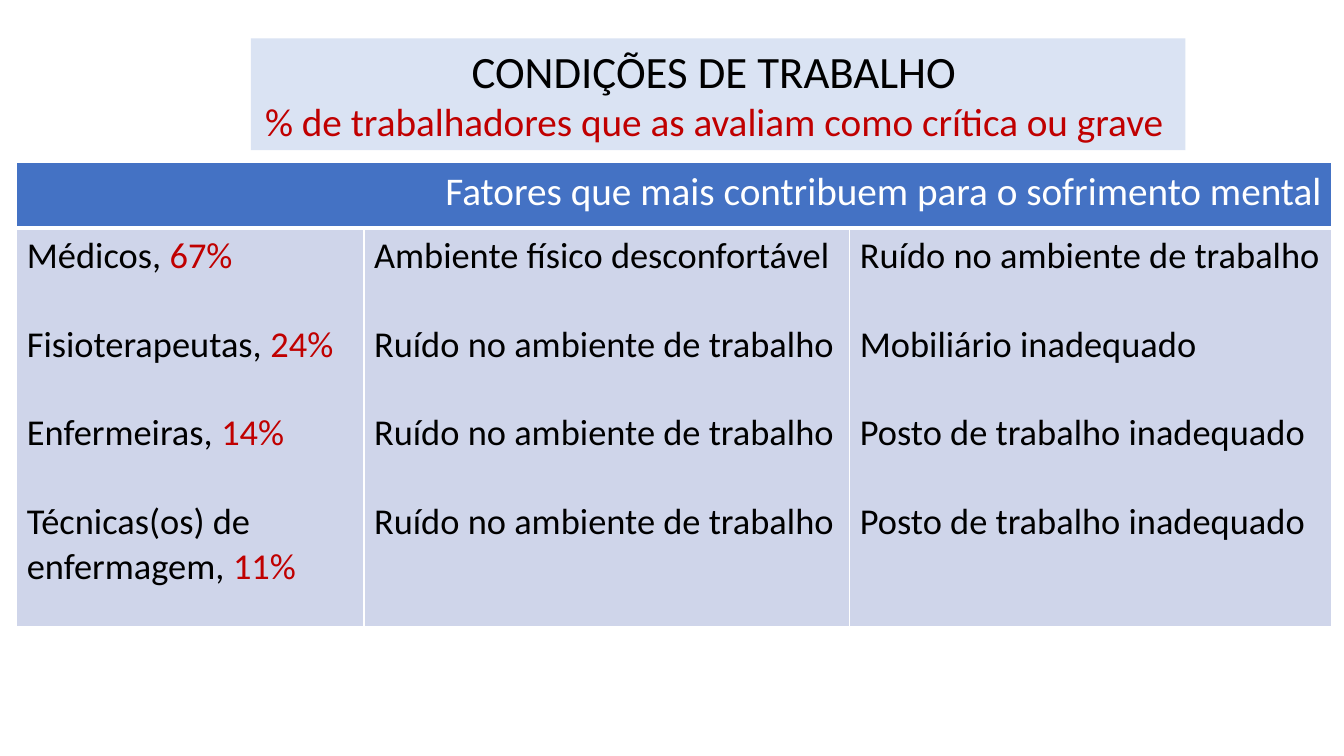
"""Build the slide on working conditions and mental suffering factors."""
from dataclasses import dataclass

from lxml import etree
from pptx import Presentation
from pptx.dml.color import RGBColor
from pptx.enum.shapes import MSO_SHAPE
from pptx.enum.text import MSO_ANCHOR, PP_ALIGN
from pptx.oxml.ns import qn
from pptx.slide import Slide
from pptx.table import _Cell
from pptx.text.text import TextFrame
from pptx.util import Pt

RECTANGLE = MSO_SHAPE.RECTANGLE
MIDDLE = MSO_ANCHOR.MIDDLE
LEFT, CENTER, RIGHT = PP_ALIGN.LEFT, PP_ALIGN.CENTER, PP_ALIGN.RIGHT


@dataclass(frozen=True)
class Theme:
    font: str = "Calibri"
    title_size: float = 32
    heading_size: float = 28
    body_size: float = 26
    entry_gap: float = 31.7
    black: str = "000000"
    white: str = "FFFFFF"
    red: str = "C00000"
    banner: str = "DAE3F3"
    header: str = "4472C4"
    body: str = "CFD5EA"


@dataclass(frozen=True)
class Span:
    text: str
    color: str
    size: float


@dataclass(frozen=True)
class Profession:
    name: str
    share: str
    first_factor: str
    second_factor: str


THEME = Theme()
NOISE = "Ruído no ambiente de trabalho"
WORKSTATION = "Posto de trabalho inadequado"
PROFESSIONS = [
    Profession("Médicos, ", "67%", "Ambiente físico desconfortável", NOISE),
    Profession("Fisioterapeutas, ", "24%", NOISE, "Mobiliário inadequado"),
    Profession("Enfermeiras, ", "14%", NOISE, WORKSTATION),
    Profession("Técnicas(os) de enfermagem, ", "11%", NOISE, WORKSTATION),
]
COLUMN_WIDTHS = [248, 347, 344]
ROW_HEIGHTS = [46.8, 284.4]


def body_span(text: str, color: str = THEME.black) -> Span:
    """Return a span in the table's body size."""
    return Span(text, color, THEME.body_size)


def write(frame: TextFrame, lines: list[list[Span]], alignment: PP_ALIGN, gap: float = 0) -> None:
    """Write one paragraph per line, with a gap between paragraphs."""
    for index, spans in enumerate(lines):
        paragraph = frame.add_paragraph() if index else frame.paragraphs[0]
        paragraph.alignment = alignment
        paragraph.space_before = Pt(gap if index else 0)
        for span in spans:
            run = paragraph.add_run()
            run.text = span.text
            run.font.name = THEME.font
            run.font.size = Pt(span.size)
            run.font.bold = False
            run.font.color.rgb = RGBColor.from_string(span.color)


def style_cell(cell: _Cell, fill: str, top: float, bottom: float) -> None:
    """Give a cell white borders and a solid fill."""
    properties = cell._tc.get_or_add_tcPr()
    for side, width in (("L", 1), ("R", 1), ("T", top), ("B", bottom)):
        line = etree.SubElement(properties, qn(f"a:ln{side}"), w=str(Pt(width)))
        solid = etree.SubElement(line, qn("a:solidFill"))
        etree.SubElement(solid, qn("a:srgbClr"), val=THEME.white)
    cell.fill.solid()
    cell.fill.fore_color.rgb = RGBColor.from_string(fill)


def add_banner(slide: Slide) -> None:
    """Add the title banner."""
    banner = slide.shapes.add_shape(RECTANGLE, Pt(179.3), Pt(27.4), Pt(667.4), Pt(79.9))
    banner.shadow.inherit = False
    banner.fill.solid()
    banner.fill.fore_color.rgb = RGBColor.from_string(THEME.banner)
    banner.line.fill.background()
    frame = banner.text_frame
    frame.word_wrap = True
    frame.vertical_anchor = MIDDLE
    frame.margin_right = Pt(13)
    subtitle = "% de trabalhadores que as avaliam como crítica ou grave"
    write(frame, [
        [Span("CONDIÇÕES DE TRABALHO", THEME.black, THEME.title_size)],
        [Span(subtitle, THEME.red, THEME.heading_size)],
    ], CENTER)


def add_factor_table(slide: Slide) -> None:
    """Add the table of factors by profession."""
    table = slide.shapes.add_table(
        len(ROW_HEIGHTS), len(COLUMN_WIDTHS), Pt(12), Pt(116.3),
        Pt(sum(COLUMN_WIDTHS)), Pt(sum(ROW_HEIGHTS))).table
    table.first_row = False
    table.horz_banding = False
    for column, width in zip(table.columns, COLUMN_WIDTHS):
        column.width = Pt(width)
    for row, height in zip(table.rows, ROW_HEIGHTS):
        row.height = Pt(height)
    for index in range(len(COLUMN_WIDTHS)):
        style_cell(table.cell(0, index), THEME.header, 1, 3)
        style_cell(table.cell(1, index), THEME.body, 3, 1)
    heading = table.cell(0, 0)
    heading.merge(table.cell(0, len(COLUMN_WIDTHS) - 1))
    heading_text = "Fatores que mais contribuem para o sofrimento mental"
    write(heading.text_frame, [[Span(heading_text, THEME.white, THEME.heading_size)]], RIGHT)
    columns = [
        [[body_span(item.name), body_span(item.share, THEME.red)] for item in PROFESSIONS],
        [[body_span(item.first_factor)] for item in PROFESSIONS],
        [[body_span(item.second_factor)] for item in PROFESSIONS],
    ]
    for index, lines in enumerate(columns):
        write(table.cell(1, index).text_frame, lines, LEFT, THEME.entry_gap)


def main() -> None:
    """Build and save the presentation."""
    presentation = Presentation()
    presentation.slide_width = Pt(960)
    presentation.slide_height = Pt(540)
    slide = presentation.slides.add_slide(presentation.slide_layouts[6])
    add_factor_table(slide)
    add_banner(slide)
    presentation.save("out.pptx")


if __name__ == "__main__":
    main()
